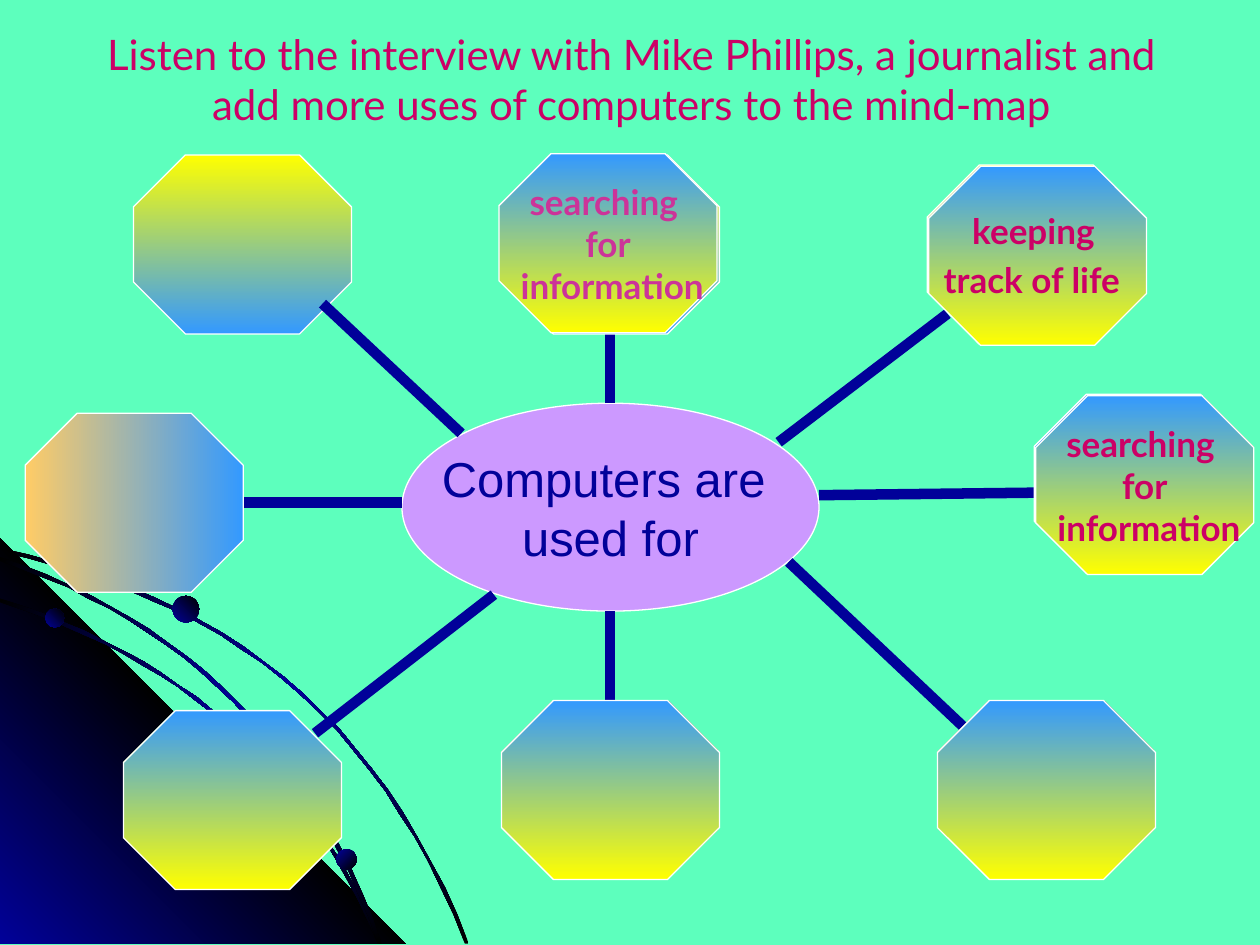
"""Build a mind-map slide: a hub, eight octagon nodes, their spokes and a corner ornament."""
from copy import deepcopy

from lxml.etree import SubElement
from pptx import Presentation
from pptx.dml.color import RGBColor
from pptx.enum.shapes import MSO_CONNECTOR, MSO_SHAPE
from pptx.enum.text import MSO_ANCHOR, MSO_AUTO_SIZE, PP_ALIGN
from pptx.oxml.ns import qn
from pptx.util import Inches, Pt

NAVY, BLACK, WHITE = "010199", "000000", "FFFFFF"
YELLOW, BLUE, ORANGE = "FFFF00", "3399FF", "FFCC66"
PINK, MAGENTA, LILAC, MINT = "CC0066", "CC3399", "CC99FF", "5DFFBD"
RISING, FALLING, DOWN, ACROSS = 45, 315, 270, 0
NODE_W, NODE_H = 1.73, 1.42
ARC_STEPS, ARC_WIDTH = 24, 0.03


def paint(fill, *colours, angle=0):
    if len(colours) == 1:
        fill.solid()
        fill.fore_color.rgb = RGBColor.from_string(colours[0])
        return
    fill.gradient()
    fill.gradient_angle = angle
    first = fill.gradient_stops[0]._gs
    for _ in colours[2:]:
        first.addnext(deepcopy(first))
    for i, (stop, colour) in enumerate(zip(fill.gradient_stops, colours)):
        stop.position = i / (len(colours) - 1)
        stop.color.rgb = RGBColor.from_string(colour)


def write(tf, text, size=20, font="Lato", colour=PINK, bold=False, wrap=False):
    tf.word_wrap = wrap
    tf.auto_size = MSO_AUTO_SIZE.NONE
    tf.vertical_anchor = MSO_ANCHOR.MIDDLE
    tf.text = text
    for p in tf.paragraphs:
        p.alignment = PP_ALIGN.CENTER
        for r in p.runs:
            r.font.size, r.font.name, r.font.bold = Pt(size), font, bold
            paint(r.font.fill, colour)


prs = Presentation()
prs.slide_width, prs.slide_height = Inches(10), Inches(7.5)
slide = prs.slides.add_slide(prs.slide_layouts[5])
shapes = slide.shapes
paint(slide.background.fill, MINT)

title = shapes.title
title.left, title.top, title.width, title.height = Inches(0.51), Inches(0), Inches(9), Inches(1.25)
write(title.text_frame, "Listen to the interview with Mike Phillips, a journalist and "
      "add more uses of computers to the mind-map", size=24, wrap=True)

# Each arc is a Bezier curve: start, two control points, end.
outer_arc = [(0, 4.35), (1.76, 4.74), (2.99, 5.63), (3.72, 7.49)]
inner_arc = [(0, 4.75), (1.43, 5.22), (2.4, 6.02), (3.03, 7.49)]
middle_arc = [(0, 4.42), (1.51, 4.95), (2.45, 5.89), (3.03, 7.49)]
corner = [(0, 4.27), (3.22, 7.49), (0, 7.49)]

bands = []
for curve in (outer_arc, inner_arc, middle_arc):
    outside, inside = [], []
    for step in range(ARC_STEPS + 1):
        t = step / ARC_STEPS
        weights = (1 - t) ** 3, 3 * t * (1 - t) ** 2, 3 * t ** 2 * (1 - t), t ** 3
        x = sum(w * px for w, (px, py) in zip(weights, curve))
        y = sum(w * py for w, (px, py) in zip(weights, curve))
        outside.append((x, y))
        inside.append((x - ARC_WIDTH * t, y + ARC_WIDTH * (1 - t)))
    bands.append((outside + inside[::-1], (BLACK, NAVY, BLACK), FALLING))
bands.insert(1, (corner, (NAVY, BLACK, NAVY), RISING))

ornaments = []
for points, colours, angle in bands:
    fb = shapes.build_freeform(*points[0], scale=Inches(1))
    fb = shapes.build_freeform(*[round(100 * v) for v in points[0]], scale=Inches(0.01))
    fb.add_line_segments([(100 * x, 100 * y) for x, y in points[1:]], close=True)
    ornaments.append((fb.convert_to_shape(), colours, angle))
for x, y, size, angle in [(0.36, 4.83, 0.15, RISING), (2.67, 6.74, 0.16, FALLING),
                          (1.37, 4.73, 0.21, RISING)]:
    bead = shapes.add_shape(MSO_SHAPE.OVAL, Inches(x), Inches(y), Inches(size), Inches(size))
    ornaments.append((bead, (NAVY, BLACK), angle))
for sp, colours, angle in ornaments:
    sp.shadow.inherit = False
    paint(sp.fill, *colours, angle=angle)
    sp.line.fill.background()

hub = shapes.add_shape(MSO_SHAPE.OVAL, Inches(3.19), Inches(3.2), Inches(3.31), Inches(1.65))
hub.shadow.inherit = False
paint(hub.fill, LILAC)
paint(hub.line.fill, WHITE)
hub.line.width = Pt(0.75)
write(hub.text_frame, "Computers are \nused for", size=28, font="Arial", colour=NAVY)

vertical, horizontal = (YELLOW, BLUE, DOWN), (BLUE, ORANGE, ACROSS)
search = "searching \nfor\n information"
nodes = [(1.06, 1.23, 0, vertical, "", PINK),
         (0.2, 3.28, 180, horizontal, "", PINK),
         (0.98, 5.64, 180, vertical, "", PINK),
         (3.98, 5.56, 180, vertical, "", PINK),
         (7.44, 5.56, 180, vertical, "", PINK)]
labelled = [(3.96, 1.22, 0.02, 0.01, vertical, search, MAGENTA),
            (7.37, 1.32, -0.01, -0.01, vertical, "keeping \ntrack of life", PINK),
            (8.22, 3.14, -0.01, -0.01, horizontal, search, PINK)]
for x, y, dx, dy, backing, text, colour in labelled:
    nodes.append((x + dx, y + dy, 0, backing, "", colour))
    nodes.append((x, y, 180, vertical, text, colour))

spokes_below = [(7.52, 2.49, 6.18, 3.51), (8.23, 3.91, 6.5, 3.93), (7.68, 5.8, 6.26, 4.46),
                (4.84, 5.56, 4.84, 4.85), (4.84, 3.2, 4.84, 2.65), (3.19, 3.99, 1.93, 3.99)]
spokes_above = [(3.66, 3.44, 2.56, 2.41), (3.92, 4.72, 2.5, 5.82)]

for spokes, octagons in [(spokes_below, nodes), (spokes_above, [])]:
    for x1, y1, x2, y2 in spokes:
        spoke = shapes.add_connector(MSO_CONNECTOR.STRAIGHT, Inches(x1), Inches(y1),
                                     Inches(x2), Inches(y2))
        paint(spoke.line.fill, NAVY)
        spoke.line.width = Pt(6)
        SubElement(spoke._element.spPr, qn("a:effectLst"))
    for x, y, turn, (start, end, angle), text, colour in octagons:
        sp = shapes.add_shape(MSO_SHAPE.OCTAGON, Inches(x), Inches(y),
                              Inches(NODE_W), Inches(NODE_H))
        sp.adjustments[0] = 0.29
        sp.rotation = turn
        sp.shadow.inherit = False
        paint(sp.fill, start, end, angle=angle)
        paint(sp.line.fill, WHITE)
        sp.line.width = Pt(0.75)
        if text:
            write(sp.text_frame, text, colour=colour, bold=True)
            sp.text_frame._txBody.bodyPr.set("rot", "10800000")
        if text.startswith("keeping"):
            r = sp.text_frame.paragraphs[-1].add_run()
            r.text, r.font.size, r.font.name = " ", Pt(24), "Arial"

prs.save("out.pptx")
